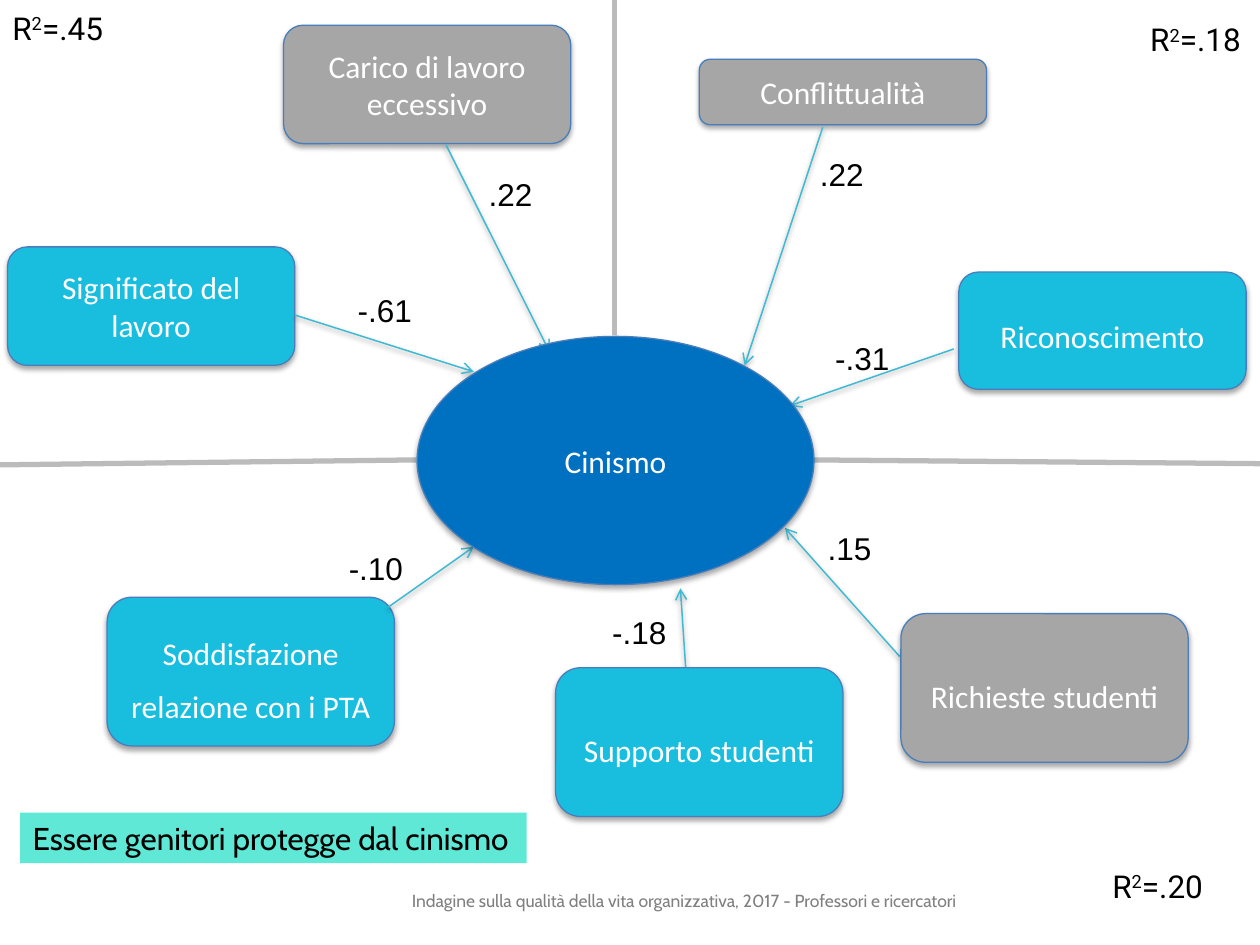
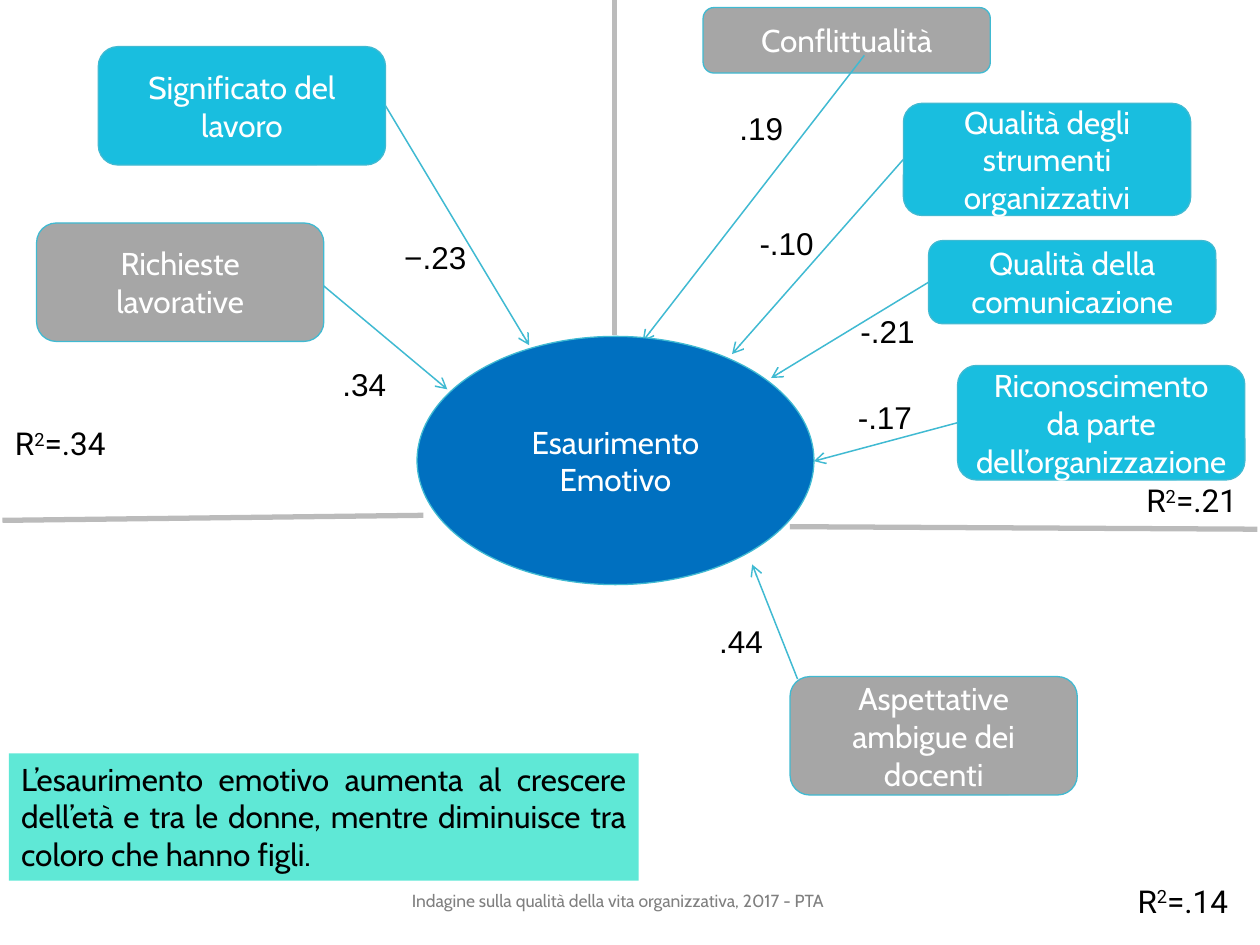
from dataclasses import dataclass

from lxml.etree import SubElement
from pptx import Presentation
from pptx.dml.color import RGBColor
from pptx.enum.shapes import MSO_CONNECTOR as Line, MSO_SHAPE as Preset
from pptx.enum.text import MSO_ANCHOR as Anchor, PP_ALIGN as Align
from pptx.oxml.ns import qn
from pptx.util import Inches, Pt

COLORS = {
    "demand": "A6A6A6",
    "resource": "19BEDF",
    "outcome": "0070C0",
    "note": "5FE8D6",
    "arrow": "40BAD2",
    "divider": "BBBBBB",
    "footer": "808080",
    "blue outline": "4A7EBB",
    "black": "000000",
    "white": "FFFFFF",
}
FACTOR_WIDTH = 2.28
LABEL_HEIGHT = 0.4
WEIGHT_WIDTHS = {".": 0.56, "-": 0.64, "−": 0.71}
OUTCOME_BOX = (3.31, 2.67, 3.15, 1.97)
FOOTER_BOX = (3.17, 6.95, 4.85, 0.4)
FIT_SIZE = (0.97, LABEL_HEIGHT)
LEFT_SIDE, RIGHT_SIDE = 1, 3


@dataclass
class Factor:
    """Start, tip and weight_at are offsets from the factor's corner; start may be a side number."""
    text: str
    kind: str
    corner: tuple
    height: float
    start: object
    tip: tuple
    weight: str
    weight_at: tuple
    spacing: float = 1.0
    arrow_behind: bool = False


@dataclass
class Style:
    font: str
    outline: str
    shadow: bool


@dataclass
class Model:
    outcome: str
    style: Style
    factors: list
    dividers: list
    fits: list
    note: str
    note_box: tuple
    note_align: object
    footer: str


def rgb(name):
    return RGBColor.from_string(COLORS[name])


def inches(values):
    return [Inches(value) for value in values]


def offset(corner, shift):
    return tuple(round(a + b, 2) for a, b in zip(corner, shift))


def apply_format(target, values):
    for name, value in values.items():
        setattr(target, name, value)


def set_effects(item, shadow=False, distance=1.8, opacity=35):
    """Replace the theme's shadow by none, or by a soft one below."""
    effects = SubElement(item.element.spPr, qn("a:effectLst"))
    if shadow:
        outer = SubElement(effects, qn("a:outerShdw"), blurRad=str(Pt(3.1)),
                           dist=str(Pt(distance)), dir="5400000", rotWithShape="0")
        tint = SubElement(outer, qn("a:srgbClr"), val=COLORS["black"])
        SubElement(tint, qn("a:alpha"), val=str(opacity * 1000))


def write(shape, text, font, color="black", size=18, align=Align.LEFT,
          anchor=Anchor.TOP, wrap=True, spacing=1.0):
    apply_format(shape.text_frame, {"word_wrap": wrap, "vertical_anchor": anchor})
    paragraph = shape.text_frame.paragraphs[0]
    apply_format(paragraph, {"alignment": align, "line_spacing": spacing})
    for part in [text] if isinstance(text, str) else text:
        run = paragraph.add_run()
        run.text = part
        apply_format(run.font, {"name": font, "size": Pt(size)})
        run.font.color.rgb = rgb(color)


def add_label(slide, box, text, font, **options):
    label = slide.shapes.add_textbox(*inches(box))
    write(label, text, font, **options)
    return label


def add_node(slide, preset, box, text, fill, style, spacing=1.0):
    node = slide.shapes.add_shape(preset, *inches(box))
    node.fill.solid()
    node.fill.fore_color.rgb = rgb(fill)
    node.line.color.rgb = rgb(style.outline)
    node.line.width = Pt(0.75)
    set_effects(node, style.shadow)
    write(node, text, style.font, "white", align=Align.CENTER,
          anchor=Anchor.MIDDLE, spacing=spacing)
    return node


def add_line(slide, start, end, color, width):
    line = slide.shapes.add_connector(Line.STRAIGHT, *inches(start + end))
    line.line.color.rgb = rgb(color)
    line.line.width = Pt(width)
    return line


def add_factor(slide, factor, style):
    box = factor.corner + (FACTOR_WIDTH, factor.height)
    node = add_node(slide, Preset.ROUNDED_RECTANGLE, box, factor.text,
                    factor.kind, style, factor.spacing)
    glued = isinstance(factor.start, int)
    start = factor.corner if glued else offset(factor.corner, factor.start)
    arrow = add_line(slide, start, offset(factor.corner, factor.tip), "arrow", 0.85)
    if glued:
        arrow.begin_connect(node, factor.start)
    SubElement(arrow.element.spPr.find(qn("a:ln")), qn("a:tailEnd"), type="arrow")
    set_effects(arrow, style.shadow, 1.6, 38)
    if factor.arrow_behind:
        node.element.addprevious(arrow.element)
    weight_size = (WEIGHT_WIDTHS[factor.weight[0]], LABEL_HEIGHT)
    add_label(slide, offset(factor.corner, factor.weight_at) + weight_size,
              factor.weight, "Arial", wrap=False)


def add_fit(slide, corner, value):
    """Explained variance of one quadrant."""
    fit = add_label(slide, corner + FIT_SIZE, ["R", "2", "=" + value], "Roboto")
    list(fit.element.iter(qn("a:rPr")))[1].set("baseline", "30000")


def add_note(slide, box, text, align):
    note = slide.shapes.add_shape(Preset.RECTANGLE, *inches(box))
    note.fill.solid()
    note.fill.fore_color.rgb = rgb("note")
    note.line.fill.background()
    note.shadow.inherit = False
    write(note, text, "Cabin", align=align)


def add_model_slide(deck, model):
    slide = deck.slides.add_slide(deck.slide_layouts[6])
    for start, end in model.dividers:
        set_effects(add_line(slide, start, end, "divider", 3))
    for factor in model.factors:
        add_factor(slide, factor, model.style)
    add_node(slide, Preset.OVAL, OUTCOME_BOX, model.outcome, "outcome", model.style)
    for corner, value in model.fits:
        add_fit(slide, corner, value)
    add_label(slide, FOOTER_BOX, "Indagine sulla qualità della vita organizzativa, 2017 - "
              + model.footer, "Cabin", color="footer", size=10, anchor=Anchor.MIDDLE)
    add_note(slide, model.note_box, model.note, model.note_align)


TOP_DIVIDER = ((4.88, -0.02), (4.88, 2.66))

CYNICISM = Model(
    outcome="Cinismo",
    style=Style("Calibri", "blue outline", True),
    factors=[
        Factor("Carico di lavoro eccessivo", "demand", (2.25, 0.2), 0.94,
               (1.29, 0.95), (2.11, 2.59), ".22", (1.53, 1.14)),
        Factor("Significato del lavoro", "resource", (0.06, 1.96), 0.94,
               (2.28, 0.54), (3.7, 0.99), "-.61", (2.68, 0.3)),
        Factor("Riconoscimento", "resource", (7.61, 2.16), 0.93,
               (-0.04, 0.61), (-1.34, 1.06), "-.31", (-1.08, 0.48), 1.3),
        Factor("Soddisfazione relazione con i PTA", "resource", (0.85, 4.74), 1.18,
               (2.23, 0.08), (2.91, -0.4), "-.10", (1.82, -0.43), 1.4),
        Factor("Conflittualità", "demand", (5.55, 0.47), 0.52,
               (0.98, 0.54), (0.36, 2.43), ".22", (0.86, 0.71)),
        Factor("Supporto studenti", "resource", (4.41, 5.3), 1.18,
               (1.04, 0.12), (0.99, -0.63), "-.18", (0.35, -0.48), 1.4, True),
        Factor("Richieste studenti", "demand", (7.15, 4.87), 1.18,
               (-0.01, 0.34), (-0.92, -0.68), ".15", (-0.68, -0.72), 1.4, True),
    ],
    dividers=[TOP_DIVIDER, ((10, 3.68), (6.45, 3.65)), ((3.3, 3.65), (-0.04, 3.69))],
    fits=[((0, 0.02), ".45"), ((9.03, 0.11), ".18"), ((8.73, 6.83), ".20")],
    note="Essere genitori protegge dal cinismo",
    note_box=(0.16, 6.45, 4.02, 0.4),
    note_align=Align.LEFT,
    footer="Professori e ricercatori",
)

EXHAUSTION = Model(
    outcome="Esaurimento Emotivo",
    style=Style("Cabin", "arrow", False),
    factors=[
        Factor("Significato del lavoro", "resource", (0.78, 0.37), 0.94,
               RIGHT_SIDE, (3.42, 2.37), "−.23", (2.33, 1.47)),
        Factor("Richieste lavorative", "demand", (0.29, 1.77), 0.94,
               (2.22, 0.45), (3.26, 1.32), ".34", (2.33, 1.08), arrow_behind=True),
        Factor("Conflittualità", "demand", (5.58, 0.06), 0.52,
               (1.28, 0.38), (-0.48, 2.65), ".19", (0.19, 0.76)),
        Factor("Qualità degli strumenti organizzativi", "resource", (7.17, 0.82), 0.89,
               LEFT_SIDE, (-1.36, 1.99), "-.10", (-1.24, 0.91)),
        Factor("Qualità della comunicazione", "resource", (7.37, 1.91), 0.66,
               LEFT_SIDE, (-1.25, 1.09), "-.21", (-0.64, 0.52)),
        Factor("Riconoscimento da parte dell’organizzazione", "resource", (7.6, 2.9), 0.91,
               LEFT_SIDE, (-1.14, 0.76), "-.17", (-0.89, 0.21)),
        Factor("Aspettative ambigue dei docenti", "demand", (6.27, 5.37), 0.94,
               (0.06, 0.02), (-0.3, -0.89), ".44", (-0.66, -0.48), arrow_behind=True),
    ],
    dividers=[TOP_DIVIDER, ((9.98, 4.2), (6.27, 4.18)), ((3.36, 4.09), (0.02, 4.13))],
    fits=[((0.02, 3.32), ".34"), ((9, 3.77), ".21"), ((8.93, 6.95), ".14")],
    note="L’esaurimento emotivo aumenta al crescere dell’età e tra le donne, "
         "mentre diminuisce tra coloro che hanno figli.",
    note_box=(0.07, 5.98, 5, 1.01),
    note_align=Align.JUSTIFY,
    footer="PTA",
)


def main():
    deck = Presentation()
    apply_format(deck, {"slide_width": Inches(10), "slide_height": Inches(7.5)})
    for model in (CYNICISM, EXHAUSTION):
        add_model_slide(deck, model)
    deck.save("out.pptx")


if __name__ == "__main__":
    main()
